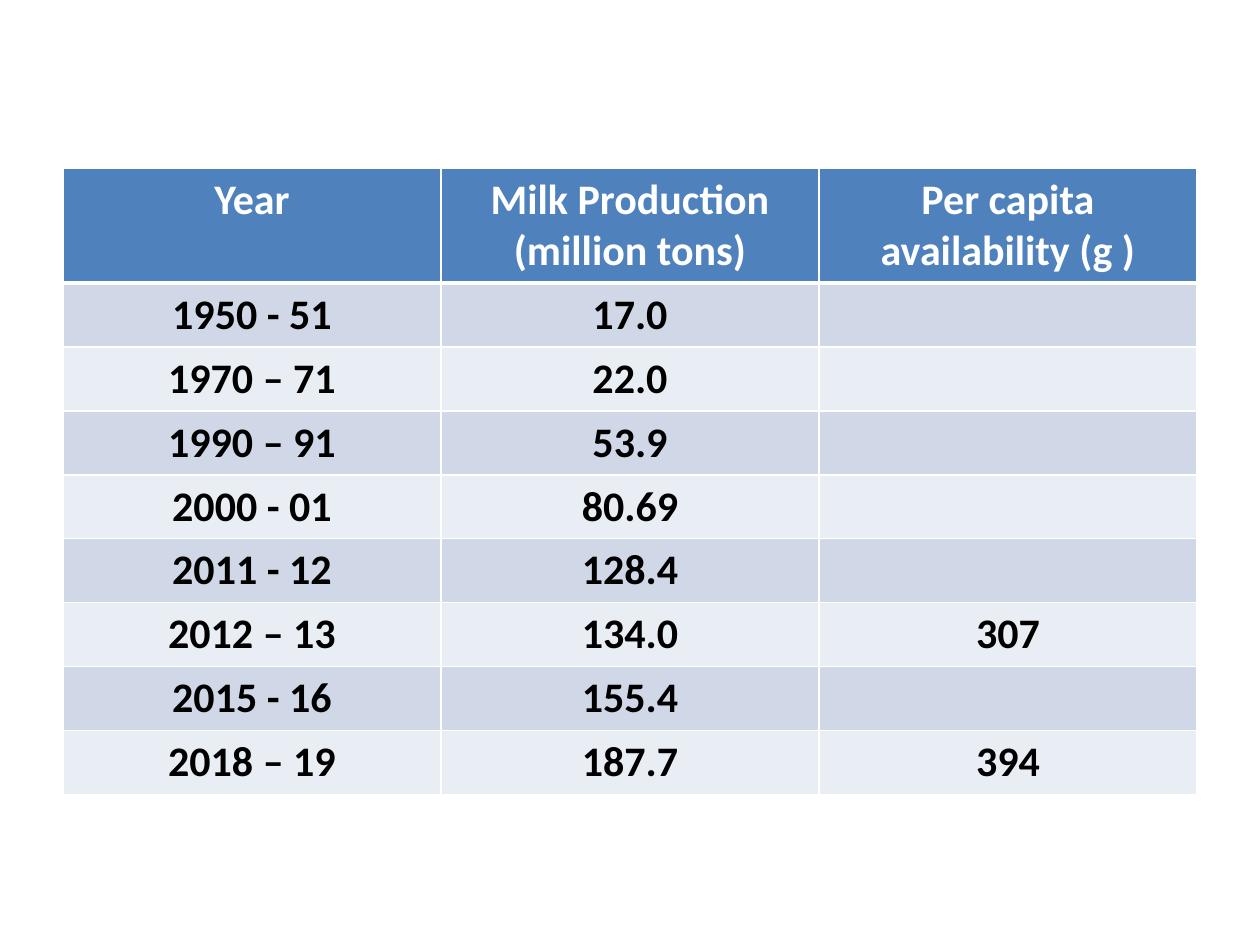
from lxml.etree import SubElement
from pptx import Presentation
from pptx.dml.color import RGBColor
from pptx.enum.text import PP_ALIGN
from pptx.oxml.ns import qn
from pptx.util import Pt

WHITE = RGBColor(0xFF, 0xFF, 0xFF)
BLACK = RGBColor(0x00, 0x00, 0x00)
HEADER_BLUE = RGBColor(0x4F, 0x81, 0xBD)
BANDS = (RGBColor(0xD0, 0xD8, 0xE8), RGBColor(0xE9, 0xED, 0xF4))

HEADERS = ["Year", "Milk Production\n(million tons)", "Per capita availability (g )"]
ROWS = [
    ("1950 - 51", "17.0", ""),
    ("1970 – 71", "22.0", ""),
    ("1990 – 91", "53.9", ""),
    ("2000 - 01", "80.69", ""),
    ("2011 - 12", "128.4", ""),
    ("2012 – 13", "134.0", "307"),
    ("2015 - 16", "155.4", ""),
    ("2018 – 19", "187.7", "394"),
]


def write_text(tf, text, font="Calibri", size=24, color=BLACK, bold=True,
               align=PP_ALIGN.CENTER):
    """Fill a text frame, one paragraph per line of text."""
    for i, line in enumerate(text.split("\n")):
        p = tf.paragraphs[0] if i == 0 else tf.add_paragraph()
        p.alignment = align
        r = p.add_run()
        r.text = line
        r.font.name, r.font.size, r.font.bold = font, Pt(size), bold
        r.font.color.rgb = color


class SlideBuilder:
    def __init__(self, slide, border_color=WHITE, border=1, header_border=3):
        self.slide = slide
        self.border_color = border_color
        self.border = border
        self.header_border = header_border

    def borders(self, cell, top, bottom):
        tcPr = cell._tc.get_or_add_tcPr()
        widths = {"a:lnL": self.border, "a:lnR": self.border,
                  "a:lnT": top, "a:lnB": bottom}
        for i, (tag, width) in enumerate(widths.items()):
            ln = SubElement(tcPr, qn(tag), w=str(Pt(width)))
            fill = SubElement(ln, qn("a:solidFill"))
            SubElement(fill, qn("a:srgbClr"), val=str(self.border_color))
            tcPr.insert(i, ln)  # borders come before the cell fill

    def table(self, x, y, col_width, header_height, row_height, headers, rows):
        data = [headers, *rows]
        n_cols = len(headers)
        frame = self.slide.shapes.add_table(
            len(data), n_cols, Pt(x), Pt(y), Pt(col_width * n_cols),
            Pt(header_height + row_height * len(rows)))
        table = frame.table
        for col in table.columns:
            col.width = Pt(col_width)
        for i, values in enumerate(data):
            is_header = i == 0
            table.rows[i].height = Pt(header_height if is_header else row_height)
            top = self.header_border if i == 1 else self.border
            bottom = self.header_border if is_header else self.border
            for j, text in enumerate(values):
                cell = table.cell(i, j)
                cell.fill.solid()
                cell.fill.fore_color.rgb = HEADER_BLUE if is_header else BANDS[(i - 1) % 2]
                self.borders(cell, top, bottom)
                if text:
                    write_text(cell.text_frame, text, color=WHITE if is_header else BLACK)


def main():
    prs = Presentation()
    prs.slide_width, prs.slide_height = Pt(720), Pt(540)
    s = SlideBuilder(prs.slides.add_slide(prs.slide_layouts[6]))

    # Milk production table
    s.table(36, 96, col_width=216, header_height=64.8, row_height=36.5,
            headers=HEADERS, rows=ROWS)

    prs.save("out.pptx")


if __name__ == "__main__":
    main()
